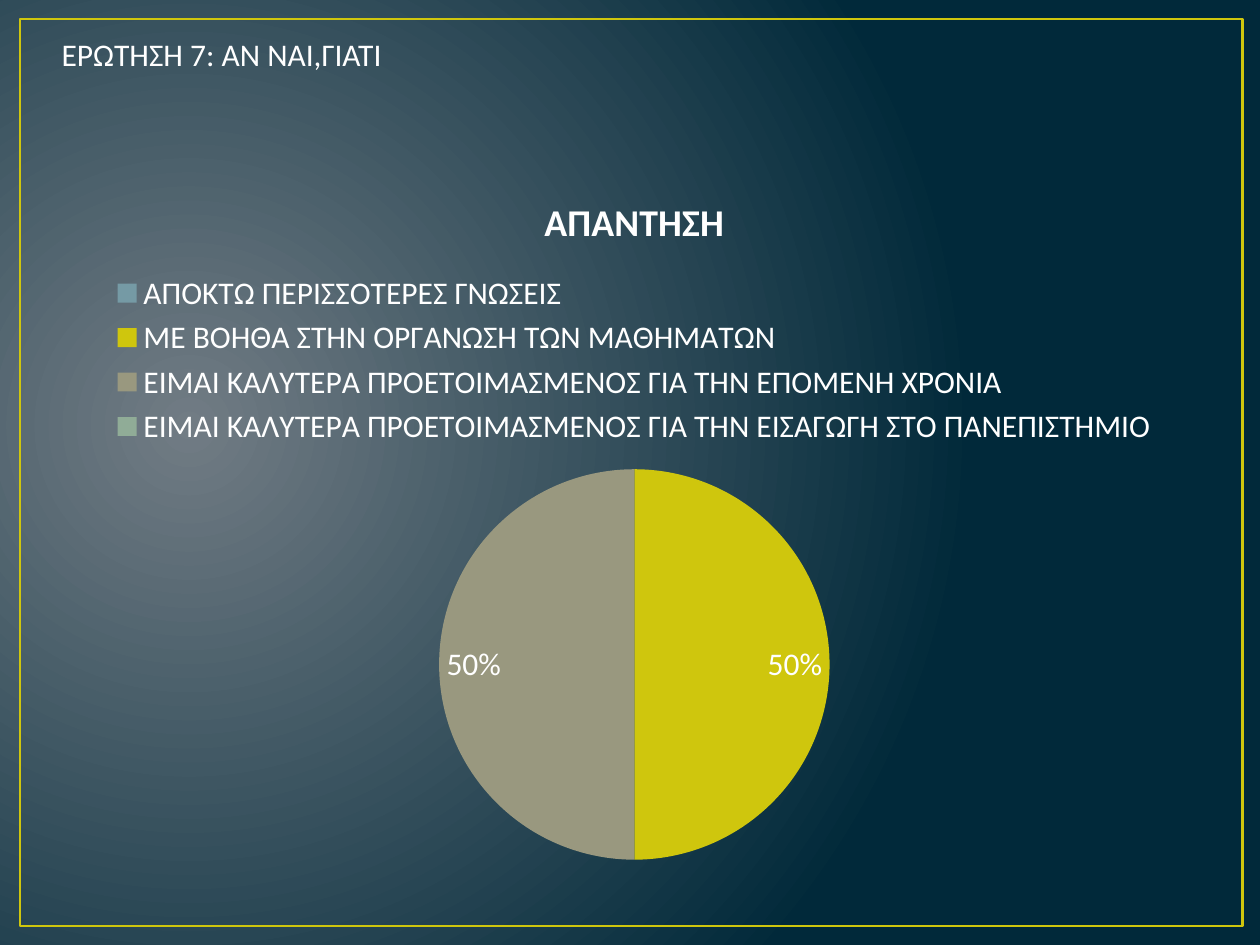
from pptx import Presentation
from pptx.chart.data import CategoryChartData
from pptx.dml.color import RGBColor
from pptx.enum.chart import XL_CHART_TYPE, XL_LABEL_POSITION, XL_LEGEND_POSITION
from pptx.enum.shapes import MSO_SHAPE
from pptx.enum.text import MSO_AUTO_SIZE
from pptx.oxml import parse_xml
from pptx.oxml.ns import nsdecls, qn
from pptx.util import Pt

PIE = XL_CHART_TYPE.PIE
IN_END = XL_LABEL_POSITION.INSIDE_END
TOP = XL_LEGEND_POSITION.TOP
RECT = MSO_SHAPE.RECTANGLE
GROW = MSO_AUTO_SIZE.SHAPE_TO_FIT_TEXT

WHITE = RGBColor(0xFF, 0xFF, 0xFF)
GLOW = RGBColor(0x71, 0x7C, 0x84)
NAVY = RGBColor(0x01, 0x29, 0x3A)
BLUE = RGBColor(0x75, 0x9A, 0xA5)
LIME = RGBColor(0xCF, 0xC6, 0x0D)
SAND = RGBColor(0x99, 0x98, 0x7F)
SAGE = RGBColor(0x90, 0xAC, 0x97)

FONT = "Calibri"
HEAD = "ΑΠΑΝΤΗΣΗ"
# Answer, share in percent, slice colour
ROWS = [
    ("ΑΠΟΚΤΩ ΠΕΡΙΣΣΟΤΕΡΕΣ ΓΝΩΣΕΙΣ", 0, BLUE),
    ("ΜΕ ΒΟΗΘΑ ΣΤΗΝ ΟΡΓΑΝΩΣΗ ΤΩΝ ΜΑΘΗΜΑΤΩΝ", 50, LIME),
    ("ΕΙΜΑΙ ΚΑΛΥΤΕΡΑ ΠΡΟΕΤΟΙΜΑΣΜΕΝΟΣ ΓΙΑ ΤΗΝ ΕΠΟΜΕΝΗ ΧΡΟΝΙΑ", 50, SAND),
    ("ΕΙΜΑΙ ΚΑΛΥΤΕΡΑ ΠΡΟΕΤΟΙΜΑΣΜΕΝΟΣ ΓΙΑ ΤΗΝ ΕΙΣΑΓΩΓΗ ΣΤΟ ΠΑΝΕΠΙΣΤΗΜΙΟ", 0, SAGE),
]


def set_font(font, size):
    font.name = FONT
    font.size = Pt(size)
    font.color.rgb = WHITE


def paint_back(slide):
    fill = slide.background.fill
    fill.gradient()
    for stop, tint in zip(fill.gradient_stops, (GLOW, NAVY)):
        stop.color.rgb = tint
    # Turn the linear blend into a round one
    grad = next(slide.element.iter(qn("a:gradFill")))
    line = grad.find(qn("a:lin"))
    grad.replace(line, parse_xml(
        f'<a:path {nsdecls("a")} path="circle">'
        '<a:fillToRect l="15000" t="50000" r="85000" b="60000"/></a:path>'))


def add_frame(slide, *box):
    frame = slide.shapes.add_shape(RECT, *map(Pt, box))
    frame.shadow.inherit = False
    frame.fill.background()
    frame.line.color.rgb = LIME
    frame.line.width = Pt(1.5)


def add_text(slide, text, *box):
    frame = slide.shapes.add_textbox(*map(Pt, box)).text_frame
    frame.word_wrap = True
    frame.auto_size = GROW
    par = frame.paragraphs[0]
    par.text = text
    set_font(par.font, 18)


def add_pie(slide, *box):
    data = CategoryChartData()
    data.categories = [name for name, _, _ in ROWS]
    data.add_series(HEAD, [share for _, share, _ in ROWS])
    chart = slide.shapes.add_chart(PIE, *map(Pt, box), data).chart
    set_font(chart.font, 18)

    # Title and legend
    chart.has_title = True
    par = chart.chart_title.text_frame.paragraphs[0]
    par.text = HEAD
    set_font(par.font, 21.6)
    par.font.bold = True
    chart.has_legend = True
    chart.legend.position = TOP
    chart.legend.include_in_layout = False
    set_font(chart.legend.font, 18)

    # Slices
    plot = chart.plots[0]
    plot.vary_by_categories = True
    series = plot.series[0]
    for spot, (_, _, tint) in enumerate(ROWS):
        fill = series.points[spot].format.fill
        fill.solid()
        fill.fore_color.rgb = tint

    # Labels, left off the empty slices
    labels = series.data_labels
    labels.show_percentage = True
    labels.show_value = False
    labels.number_format = "0%"
    labels.number_format_is_linked = False
    labels.position = IN_END
    set_font(labels.font, 18)
    bare = [spot for spot, row in enumerate(ROWS) if row[1] == 0]
    root = next(chart.element.iter(qn("c:dLbls")))
    for place, spot in enumerate(bare):
        root.insert(place, parse_xml(
            f'<c:dLbl {nsdecls("c")}><c:idx val="{spot}"/>'
            '<c:delete val="1"/></c:dLbl>'))


def main():
    deck = Presentation()
    deck.slide_width, deck.slide_height = Pt(720), Pt(540)
    slide = deck.slides.add_slide(deck.slide_layouts[6])
    paint_back(slide)
    add_frame(slide, 11.5, 10.8, 698.4, 518.4)
    add_text(slide, "ΕΡΩΤΗΣΗ 7: ΑΝ ΝΑΙ,ΓΙΑΤΙ", 28.1, 16.6, 658, 29)
    add_pie(slide, 44.6, 95.8, 635.8, 405.4)
    deck.save("out.pptx")


if __name__ == "__main__":
    main()
